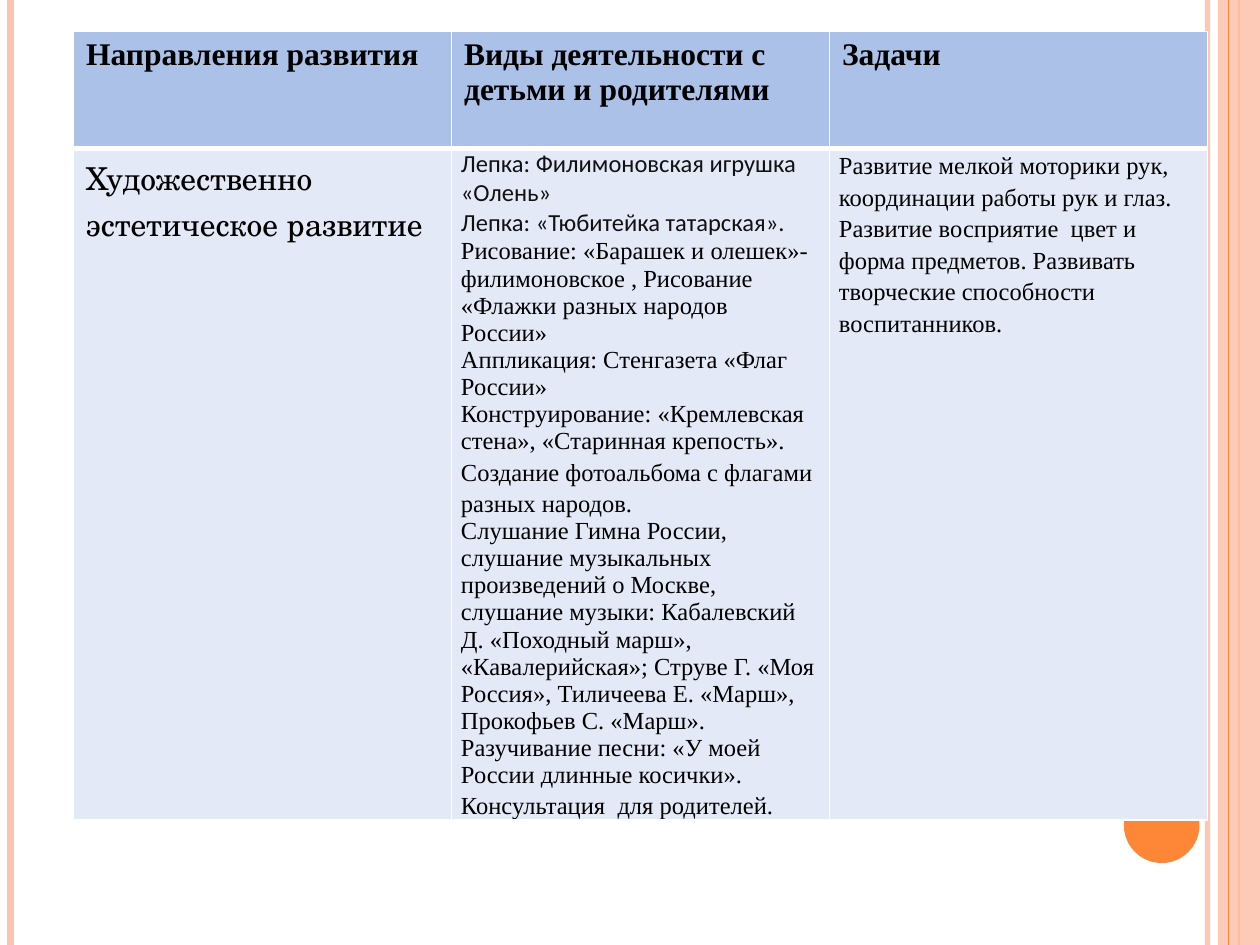
"""Builds a slide with a table of child development activities."""
import dataclasses

import lxml.etree
import pptx
import pptx.dml.color
import pptx.enum.shapes
import pptx.oxml.ns
import pptx.util

Pt = pptx.util.Pt
qn = pptx.oxml.ns.qn


@dataclasses.dataclass(frozen=True)
class Theme:
    orange: str = "FE8637"
    peach: str = "FEC3AE"
    header: str = "ACC1E8"
    body: str = "E3E9F6"
    border: str = "FFFFFF"
    ink: str = "000000"
    soft_ink: str = "111111"
    serif: str = "Times New Roman"
    sans: str = "Calibri"
    school: str = "TeX Gyre Schola"
    heading_size: float = 18
    text_size: float = 14


class SlideBuilder:
    def __init__(self, slide, theme):
        self.slide = slide
        self.theme = theme

    def paint(self, fill, color, opacity=100):
        fill.solid()
        fill.fore_color.rgb = pptx.dml.color.RGBColor.from_string(color)
        if opacity < 100:
            tint = next(fill._xPr.iter(qn("a:srgbClr")))
            lxml.etree.SubElement(tint, qn("a:alpha"), val=str(opacity * 1000))

    def stripe(self, x, color, weight, opacity=100):
        stripe = self.slide.shapes.add_connector(
            pptx.enum.shapes.MSO_CONNECTOR.STRAIGHT, Pt(x), Pt(0), Pt(x), Pt(540))
        stripe.line.width = Pt(weight)
        self.paint(stripe.line.fill, color, opacity)
        lxml.etree.SubElement(stripe._element.spPr, qn("a:effectLst"))

    def shape(self, kind, box, color, opacity=100):
        shape = self.slide.shapes.add_shape(kind, *map(Pt, box))
        shape.shadow.inherit = False
        shape.line.fill.background()
        self.paint(shape.fill, color, opacity)

    def table(self, box, heights):
        table = self.slide.shapes.add_table(len(heights), 3, *map(Pt, box)).table
        for row, height in zip(table.rows, heights):
            row.height = Pt(height)
        return table

    def cell(self, cell, color, bottom=1, tight=False):
        if tight:
            cell.margin_left, cell.margin_right = Pt(5.4), Pt(6)
            cell.margin_top = cell.margin_bottom = Pt(0)
        properties = cell._tc.get_or_add_tcPr()
        for side, weight in zip("LRTB", (1, 1, 1, bottom)):
            edge = lxml.etree.SubElement(properties, qn(f"a:ln{side}"), w=str(Pt(weight)))
            solid = lxml.etree.SubElement(edge, qn("a:solidFill"))
            lxml.etree.SubElement(solid, qn("a:srgbClr"), val=self.theme.border)
        self.paint(cell.fill, color)

    def text(self, cell, words, font, size, color=None, bold=False, spacing=None, after=None):
        paragraph = cell.text_frame.paragraphs[-1]
        if paragraph.runs:
            paragraph = cell.text_frame.add_paragraph()
        paragraph.line_spacing = spacing
        paragraph.space_after = after
        run = paragraph.add_run()
        run.text = words
        run.font.name = font
        run.font.size = Pt(size)
        run.font.bold = bold
        self.paint(run.font.fill, color or self.theme.ink)


def main():
    theme = Theme()
    deck = pptx.Presentation()
    deck.slide_width, deck.slide_height = Pt(720), Pt(540)
    builder = SlideBuilder(deck.slides.add_slide(deck.slide_layouts[6]), theme)
    kinds = pptx.enum.shapes.MSO_SHAPE

    builder.stripe(690, theme.peach, 3, 93)
    builder.stripe(6, theme.peach, 4.5)
    builder.stripe(708, theme.orange, 1.5)
    builder.shape(kinds.RECTANGLE, (696, 0, 24, 540), theme.peach, 87)
    builder.stripe(702, theme.orange, 0.75)
    builder.shape(kinds.OVAL, (642.24, 450, 43.2, 43.2), theme.orange)

    table = builder.table((42, 18, 648, 450), (67, 383))
    headings = ("Направления развития", "Виды деятельности с детьми и родителями", "Задачи")
    for column, heading in enumerate(headings):
        title = table.cell(0, column)
        builder.cell(title, theme.header, bottom=3)
        builder.text(title, heading, theme.serif, theme.heading_size, bold=True)

    direction, activities, goals = table.rows[1].cells
    builder.cell(direction, theme.body)
    builder.text(direction, "Художественно эстетическое развитие",
                 theme.school, theme.heading_size)

    builder.cell(activities, theme.body, tight=True)
    for modelling in ("Лепка: Филимоновская игрушка «Олень»",
                      "Лепка: «Тюбитейка татарская»."):
        builder.text(activities, modelling, theme.sans, theme.text_size, theme.soft_ink)
    for activity, spacing, after in (
        ("Рисование: «Барашек и олешек»- филимоновское , Рисование "
         "«Флажки разных народов России»", None, None),
        ("Аппликация: Стенгазета «Флаг России»", None, None),
        ("Конструирование: «Кремлевская стена», «Старинная крепость».", None, None),
        ("Создание фотоальбома с флагами разных народов.", Pt(18), None),
        ("Слушание Гимна России, слушание музыкальных произведений о Москве, "
         "слушание музыки: Кабалевский  Д. «Походный марш», «Кавалерийская»; "
         "Струве Г. «Моя Россия», Тиличеева Е. «Марш», Прокофьев С. «Марш».", None, None),
        ("Разучивание песни: «У моей России длинные косички».", None, None),
        ("Консультация  для родителей.", 1.15, Pt(7.5)),
    ):
        builder.text(activities, activity, theme.serif, theme.text_size,
                     spacing=spacing, after=after)

    builder.cell(goals, theme.body, tight=True)
    builder.text(goals, "Развитие мелкой моторики рук, координации работы рук и глаз. "
                 "Развитие восприятие  цвет и форма предметов. "
                 "Развивать творческие способности воспитанников.",
                 theme.serif, theme.text_size, spacing=Pt(18))

    deck.save("out.pptx")


if __name__ == "__main__":
    main()
